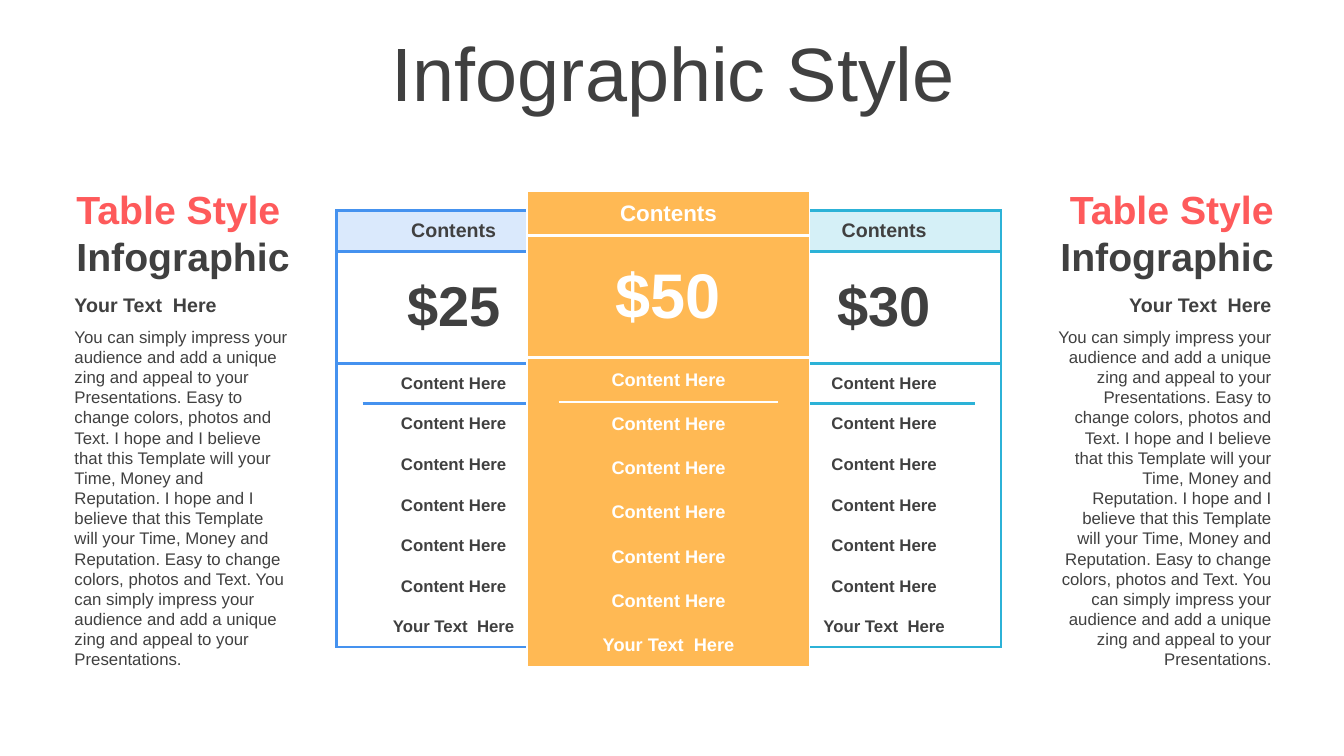
"""Build a pricing infographic slide with three tables between two text panels."""
from lxml.etree import SubElement
from pptx import Presentation
from pptx.dml.color import RGBColor
from pptx.enum.text import MSO_ANCHOR as Anchor, MSO_AUTO_SIZE as AutoSize, PP_ALIGN as Align
from pptx.oxml.ns import qn
from pptx.util import Inches, Pt

DARK, WHITE, CORAL = "404040", "FFFFFF", "FE5A5B"
BLUE, CYAN, ORANGE = "4592EF", "2CB2D7", "FFB954"
NO_GRID = "{2D5ABB26-0587-4C30-8999-92F81FD0307C}"
TITLE = "Infographic Style"
CAPTION = "Your Text  Here"
HEADING = [("Table Style", CORAL), ("Infographic", DARK)]
BODY = (
    "You can simply impress your audience and add a unique zing and appeal to your "
    "Presentations. Easy to change colors, photos and Text. I hope and I believe that this "
    "Template will your Time, Money and Reputation. I hope and I believe that this Template "
    "will your Time, Money and Reputation. Easy to change colors, photos and Text. You can "
    "simply impress your audience and add a unique zing and appeal to your Presentations."
)
FEATURES = ["Content Here"] * 6
COL_SHARES = [1, 7, 1]
ROW_SHARES = [1, 2.76] + [1] * 7
SIDE = dict(size=(2.32, 4.33), text=DARK, fill=WHITE, sizes=(14, 40, 12),
            edge=2.25, margins=(0.08, 0.04))
PLANS = [
    dict(SIDE, price="$30", at=(7.61, 2.09), line=CYAN, head="D5F0F7"),
    dict(SIDE, price="$25", at=(3.34, 2.09), line=BLUE, head="DAE9FC"),
    dict(price="$50", at=(5.23, 1.9), size=(2.8, 4.72), line=WHITE, head=ORANGE, text=WHITE,
         fill=ORANGE, sizes=(16, 45, 13), edge=1.5, margins=(0.09, 0.05)),
]
PANELS = [(0.64, Align.LEFT), (10.39, Align.RIGHT)]
PANEL_WIDTH = 2.32


def rgb(value):
    return RGBColor.from_string(value)


def write(tf, text, size, color=DARK, bold=False, align=Align.LEFT, new=False):
    p = tf.add_paragraph() if new else tf.paragraphs[0]
    p.alignment = align
    r = p.add_run()
    r.text = text
    r.font.name, r.font.size, r.font.bold = "Arial", Pt(size), bold
    r.font.color.rgb = rgb(color)
    return p


def add_box(slide, left, top, height):
    box = slide.shapes.add_textbox(*map(Inches, (left, top, PANEL_WIDTH, height)))
    tf = box.text_frame
    tf.word_wrap, tf.auto_size = True, AutoSize.SHAPE_TO_FIT_TEXT
    return tf


def add_panel(slide, left, align):
    write(add_box(slide, left, 2.86, 0.34), CAPTION, 14, bold=True, align=align)
    write(add_box(slide, left, 3.19, 3.53), BODY, 12, align=align)
    tf = add_box(slide, left + 0.02, 1.79, 1.04)
    for i, (text, color) in enumerate(HEADING):
        write(tf, text, 28, color, True, align, new=i > 0)


def add_border(cell, side, color, width):
    ln = SubElement(cell._tc.get_or_add_tcPr(), qn(f"a:ln{side}"), w=str(Pt(width)))
    fill = SubElement(ln, qn("a:solidFill"))
    SubElement(fill, qn("a:srgbClr"), val=color)


def cell_edges(row, col, last_row, last_col, merged, edge):
    """Return the visible sides of a cell with their line widths."""
    sides = {}
    if col == 0:
        sides["L"] = edge
    if col == last_col or (merged and col == 0):
        sides["R"] = edge
    if row in (0, 1) or (row == 2 and col == 1):
        sides["T"] = 2.25 if row == 1 else edge
    if row in (0, last_row):
        sides["B"] = 2.25 if row == 0 else edge
    return sides


def add_plan(slide, plan):
    n_rows, n_cols = len(ROW_SHARES), len(COL_SHARES)
    width, height = plan["size"]
    frame = slide.shapes.add_table(n_rows, n_cols, *map(Inches, plan["at"] + plan["size"]))
    table = frame.table
    table.first_row = table.horz_banding = False
    table._tbl.tblPr.find(qn("a:tableStyleId")).text = NO_GRID
    for col, share in zip(table.columns, COL_SHARES):
        col.width = Inches(width * share / sum(COL_SHARES))
    for row, share in zip(table.rows, ROW_SHARES):
        row.height = Inches(height * share / sum(ROW_SHARES))

    head, price, small = plan["sizes"]
    labels = [("Contents", head), (plan["price"], price)]
    labels += [(text, small) for text in FEATURES + [CAPTION]]
    for r, (text, size) in enumerate(labels):
        merged = r in (0, 1, n_rows - 1)
        if merged:
            table.cell(r, 0).merge(table.cell(r, n_cols - 1))
        for c in range(n_cols):
            cell = table.cell(r, c)
            edges = cell_edges(r, c, n_rows - 1, n_cols - 1, merged, plan["edge"])
            for side, line_width in edges.items():
                add_border(cell, side, plan["line"], line_width)
            cell.fill.solid()
            cell.fill.fore_color.rgb = rgb(plan["head"] if r == 0 else plan["fill"])
            cell.vertical_anchor = Anchor.MIDDLE
            cell.margin_left = cell.margin_right = Inches(plan["margins"][0])
            cell.margin_top = cell.margin_bottom = Inches(plan["margins"][1])
        label = table.cell(r, 0 if merged else 1)
        write(label.text_frame, text, size, plan["text"], True, Align.CENTER)


def main():
    prs = Presentation()
    prs.slide_width, prs.slide_height = Inches(13.33), Inches(7.5)
    slide = prs.slides.add_slide(prs.slide_layouts[5])
    title = slide.shapes.title
    title.left, title.top, title.width, title.height = map(Inches, (0.35, 0.37, 12.66, 0.79))
    tf = title.text_frame
    tf.vertical_anchor, tf.auto_size = Anchor.MIDDLE, AutoSize.NONE
    write(tf, TITLE, 54, align=Align.CENTER).line_spacing = 0.9
    for plan in PLANS:
        add_plan(slide, plan)
    for left, align in PANELS:
        add_panel(slide, left, align)
    prs.save("out.pptx")


if __name__ == "__main__":
    main()
